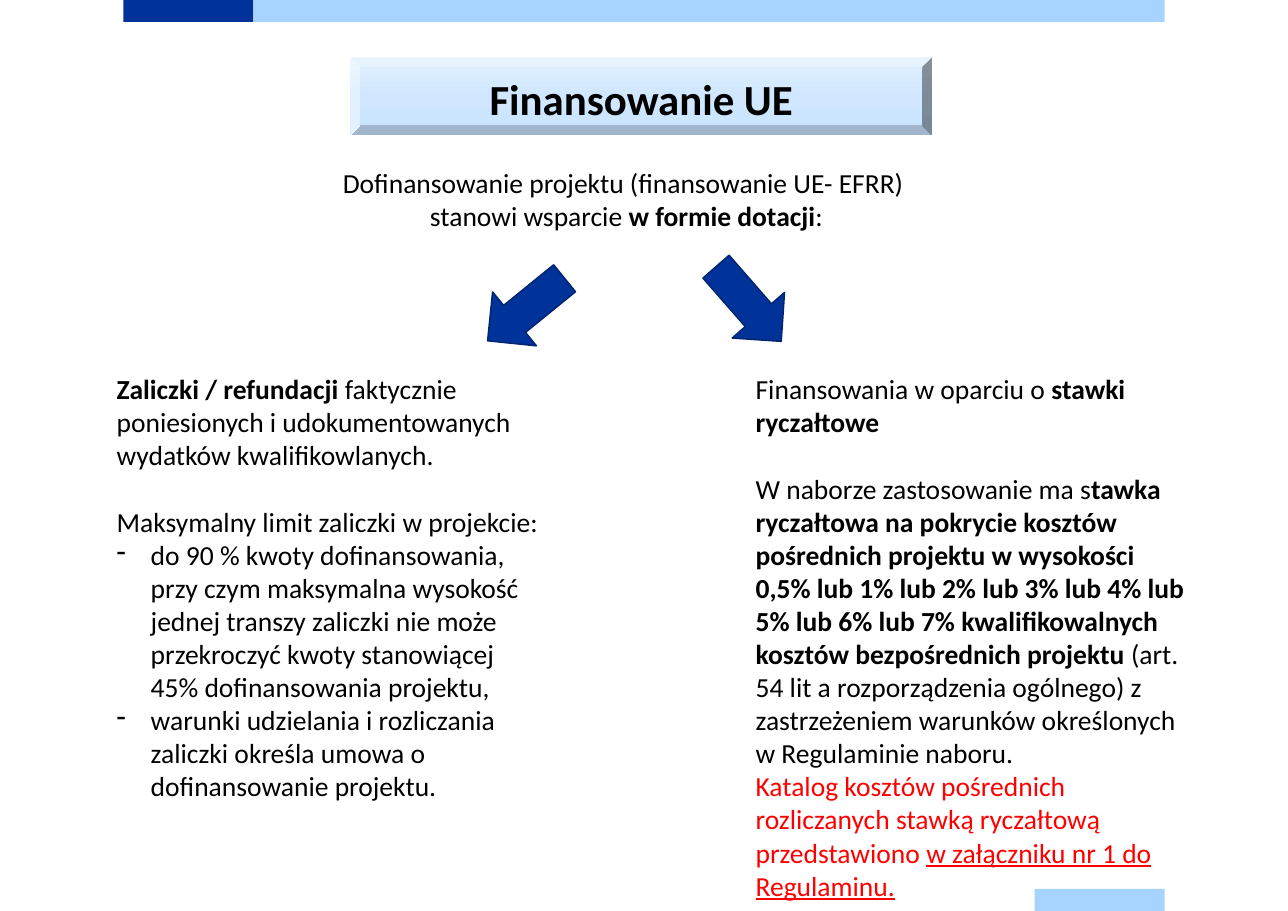
from copy import deepcopy
from pptx import Presentation
from pptx.util import Inches, Pt
from pptx.dml.color import RGBColor
from pptx.enum.shapes import MSO_SHAPE as Shape
from pptx.enum.text import MSO_ANCHOR as Anchor, MSO_AUTO_SIZE as Fit, PP_ALIGN as Align
from pptx.oxml.ns import qn
from lxml import etree

NAVY = RGBColor(0x00, 0x33, 0x99)
EDGE = RGBColor(0x00, 0x26, 0x71)
SKY = RGBColor(0xA6, 0xD3, 0xFF)
BLACK = RGBColor(0, 0, 0)
RED = RGBColor(0xFF, 0, 0)
SHADES = [(0, RGBColor(0xE1, 0xF0, 0xFF)),
          (0.5, RGBColor(0xD0, 0xE7, 0xFF)),
          (1, RGBColor(0xCA, 0xE4, 0xFF))]
FONT = "Calibri"
GAP = Pt(22)  # one line of body text
WIDE, HIGH = 11.69, 8.27

# Each paragraph: (runs, space before, dash); each run: (text, bold, colour, underline)
INTRO = [
    ([("Dofinansowanie projektu (finansowanie UE- EFRR) ",)], 0, False),
    ([("stanowi wsparcie ",), ("w formie dotacji", True), (":",)], 0, False),
]
ADVANCE = [
    ([("Zaliczki / refundacji ", True),
      ("faktycznie poniesionych i udokumentowanych wydatków kwalifikowlanych.",)], 0, False),
    ([("Maksymalny limit zaliczki w projekcie:",)], GAP, False),
    ([("do 90 % kwoty dofinansowania, przy czym maksymalna wysokość jednej transzy "
       "zaliczki nie może przekroczyć kwoty stanowiącej 45% dofinansowania projektu,",)], 0, True),
    ([("warunki udzielania i rozliczania zaliczki określa umowa o "
       "dofinansowanie projektu.",)], 0, True),
]
RATES = [
    ([("Finansowania w oparciu o ",), ("stawki ryczałtowe", True)], 0, False),
    ([("W naborze zastosowanie ma s",),
      ("tawka ryczałtowa na pokrycie kosztów pośrednich projektu w wysokości "
       "0,5% lub 1% lub 2% lub 3% lub 4% lub 5% lub 6% lub 7% kwalifikowalnych "
       "kosztów bezpośrednich projektu ", True),
      ("(art. 54 lit a rozporządzenia ogólnego) z zastrzeżeniem warunków "
       "określonych w Regulaminie naboru.",)], GAP, False),
    ([("Katalog kosztów pośrednich rozliczanych stawką ryczałtową przedstawiono ", False, RED),
      ("w załączniku nr 1 do Regulaminu.", False, RED, True)], 0, False),
]


def add_form(slide, kind, x, y, w, h, fill=None, line=None):
    form = slide.shapes.add_shape(kind, Inches(x), Inches(y), Inches(w), Inches(h))
    form.shadow.inherit = False
    if fill is not None:
        form.fill.solid()
        form.fill.fore_color.rgb = fill
    if line is not None:
        form.line.color.rgb = line
        form.line.width = Pt(1)
    else:
        form.line.fill.background()
    return form


def style_run(run, size, bold=False, color=BLACK, under=False):
    font = run.font
    font.name, font.size, font.bold = FONT, Pt(size), bold
    font.color.rgb = color
    if under:
        font.underline = True


def add_bars(slide, x, w):
    part, tall = 1.18, 0.2
    add_form(slide, Shape.RECTANGLE, x, 0, part, tall, NAVY)
    add_form(slide, Shape.RECTANGLE, x + part, 0, w - part, tall, SKY)
    add_form(slide, Shape.RECTANGLE, x + w - part, HIGH - tall, part, tall, SKY)


def add_title(slide, x, y, w, h, text):
    plate = add_form(slide, Shape.BEVEL, x, y, w, h)
    # Three-stop gradient, light at the top
    plate.fill.gradient()
    plate.fill.gradient_angle = 270
    stops = plate.element.spPr.find(qn("a:gradFill")).find(qn("a:gsLst"))
    stops.append(deepcopy(stops[0]))
    for stop, (place, color) in zip(plate.fill.gradient_stops, SHADES):
        stop.position = place
        stop.color.rgb = color
    # Heading
    frame = plate.text_frame
    frame.margin_left = frame.margin_right = frame.margin_top = frame.margin_bottom = 0
    frame.vertical_anchor = Anchor.MIDDLE
    frame.text = text
    para = frame.paragraphs[0]
    para.alignment = Align.CENTER
    para.line_spacing = Pt(36)
    style_run(para.runs[0], 28, True)


def add_dash(para):
    props = para._p.get_or_add_pPr()
    props.set("marL", str(Inches(0.31)))
    props.set("indent", str(-Inches(0.31)))
    etree.SubElement(props, qn("a:buFontTx"))
    etree.SubElement(props, qn("a:buChar")).set("char", "-")


def add_text(slide, x, y, w, h, paras, align=Align.LEFT):
    box = slide.shapes.add_textbox(Inches(x), Inches(y), Inches(w), Inches(h))
    frame = box.text_frame
    frame.word_wrap = True
    frame.auto_size = Fit.SHAPE_TO_FIT_TEXT
    for i, (runs, space, dash) in enumerate(paras):
        para = frame.add_paragraph() if i else frame.paragraphs[0]
        if dash:
            add_dash(para)
        para.alignment = align
        if space:
            para.space_before = space
        for text, *look in runs:
            run = para.add_run()
            run.text = text
            style_run(run, 18, *look)


def add_arrow(slide, x, y, turn):
    arrow = add_form(slide, Shape.DOWN_ARROW, x, y, 0.63, 0.9, NAVY, EDGE)
    arrow.rotation = turn


def main():
    deck = Presentation()
    deck.slide_width, deck.slide_height = Inches(WIDE), Inches(HIGH)
    slide = deck.slides.add_slide(deck.slide_layouts[6])
    # Header and footer bars
    add_bars(slide, 1.12, 9.45)
    # Title and introduction
    add_title(slide, 3.18, 0.52, 5.28, 0.71, "Finansowanie UE")
    add_text(slide, -0.23, 1.46, 11.83, 0.71, INTRO, Align.CENTER)
    # Arrows to the two forms of support
    add_arrow(slide, 4.46, 2.36, 50.9)
    add_arrow(slide, 6.48, 2.31, 318.9)
    # Columns
    add_text(slide, 0.96, 3.33, 4.09, 4.34, ADVANCE)
    add_text(slide, 6.76, 3.33, 4.09, 4.95, RATES)
    deck.save("out.pptx")


if __name__ == "__main__":
    main()
